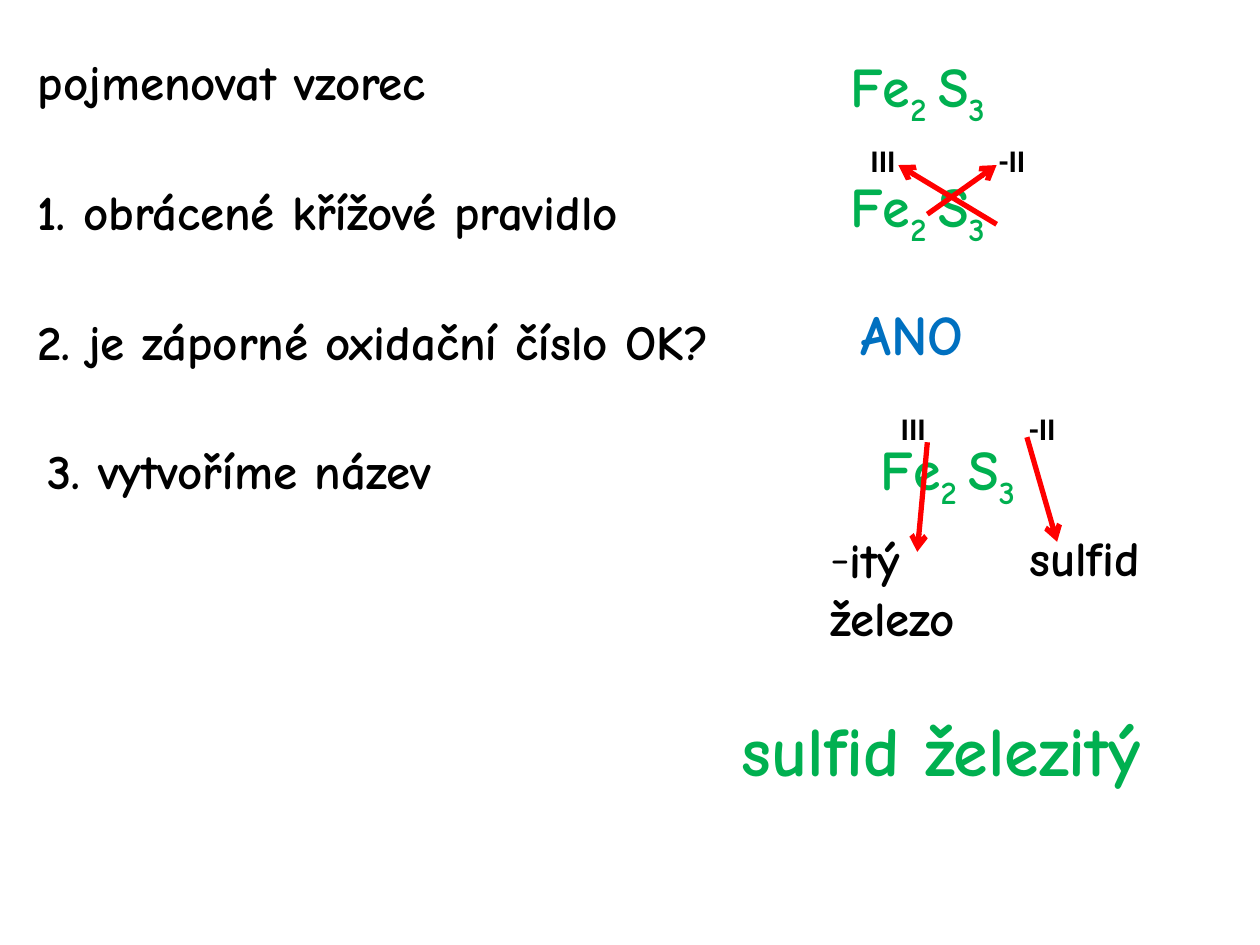
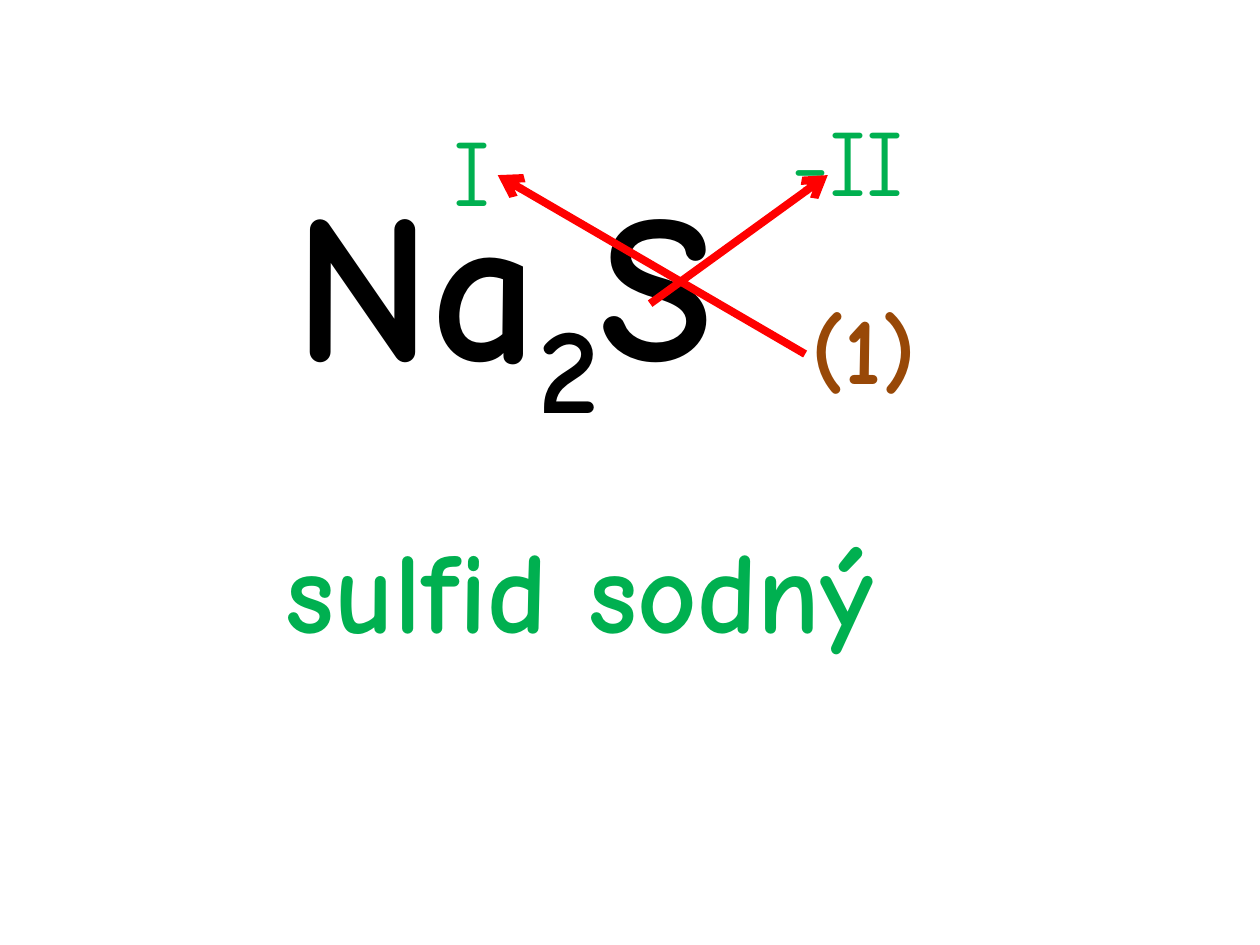
from lxml.etree import SubElement
from pptx import Presentation
from pptx.dml.color import RGBColor
from pptx.enum.shapes import MSO_CONNECTOR
from pptx.enum.text import MSO_ANCHOR, MSO_AUTO_SIZE, PP_ALIGN
from pptx.oxml.ns import qn
from pptx.util import Inches, Pt

COLORS = {
    "text": "000000",
    "formula": "00B050",
    "answer": "0070C0",
    "arrow": "FF0000",
    "hidden_index": "984807",
}
HAND, PLAIN = "Comic Neue", "Calibri"
SUBSCRIPT = "-25000"
TITLE_ONLY = 5
IRON_SULFIDE = [("Fe", False), ("2 ", True), ("S", False), ("3", True)]
SODIUM_SULFIDE = [("Na", False), ("2", True), ("S", False)]


def add_spans(para, spans, size, color, font=HAND, bold=True):
    """Add (text, is_subscript) spans to a paragraph."""
    para.alignment = PP_ALIGN.LEFT
    for text, is_subscript in spans:
        span = para.add_run()
        span.text = text
        span.font.size = Pt(size)
        span.font.name = font
        span.font.bold = bold
        span.font.color.rgb = RGBColor.from_string(COLORS[color])
        if is_subscript:
            span.font._element.set("baseline", SUBSCRIPT)


def fill_box(box, place, lines, size, color="text", wrap=True, **style):
    """Place a box and write its lines; a line is a string or a list of spans."""
    box.left, box.top, box.width, box.height = (Inches(value) for value in place)
    frame = box.text_frame
    frame.word_wrap = wrap
    frame.auto_size = MSO_AUTO_SIZE.SHAPE_TO_FIT_TEXT
    frame.vertical_anchor = MSO_ANCHOR.TOP
    for number, line in enumerate(lines):
        para = frame.add_paragraph() if number else frame.paragraphs[0]
        spans = [(line, False)] if isinstance(line, str) else line
        add_spans(para, spans, size, color, **style)
    return box


def add_text(shapes, place, lines, size, color="text", **style):
    box = shapes.add_textbox(0, 0, 0, 0)
    return fill_box(box, place, lines, size, color, **style)


def add_arrow(page, start, end, width=3):
    points = [Inches(value) for value in (*start, *end)]
    arrow = page.shapes.add_connector(MSO_CONNECTOR.STRAIGHT, *points)
    arrow.line.color.rgb = RGBColor.from_string(COLORS["arrow"])
    arrow.line.width = Pt(width)
    SubElement(arrow.line._get_or_add_ln(), qn("a:tailEnd"), type="arrow")
    SubElement(arrow._element.spPr, qn("a:effectLst"))


def add_dash_bullet(para):
    properties = para._p.get_or_add_pPr()
    properties.set("marL", "0")
    properties.set("indent", "0")
    SubElement(properties, qn("a:buFont"), typeface=HAND)
    SubElement(properties, qn("a:buChar"), char="-")


def add_formula(shapes, left, top):
    add_text(shapes, (left, top, 1.73, 0.64), [IRON_SULFIDE], 32, "formula")


def add_numbered_formula(page, left, top, rise):
    """Formula with its oxidation numbers, which start a rise above it."""
    group = page.shapes.add_group_shape()
    add_formula(group.shapes, left, top)
    for number, offset in (("-II", 1.18), ("III", 0.16)):
        add_text(group.shapes, (left + offset, top - rise, 0.6, 0.4), [number],
                 18, font=PLAIN)


def add_steps(page, left, top):
    """Title and the three steps, evenly spaced in the left column."""
    pitch = 1.03
    fill_box(page.shapes.title, (left, top, 3.78, 0.57), ["pojmenovat vzorec"], 28)
    steps = [
        ("1. obrácené křížové pravidlo", 0, 5.83),
        ("2. je záporné oxidační číslo OK?", 0, 6.38),
        ("3. vytvoříme název", 0.08, 4.41),
    ]
    for number, (step, shift, width) in enumerate(steps, 1):
        place = (left + shift, top + number * pitch, width, 0.57)
        add_text(page.shapes, place, [step], 28)


def add_solution(page, left, top):
    """Right column: formula, crossed indices, check and name."""
    add_formula(page.shapes, left, top)

    # Reversed cross rule
    add_numbered_formula(page, left, top + 0.95, 0.24)
    add_arrow(page, (left + 0.71, top + 1.34), (left + 1.26, top + 0.95))
    add_arrow(page, (left + 1.26, top + 1.42), (left + 0.48, top + 0.95))

    # Check of the negative number
    add_text(page.shapes, (left + 0.08, top + 1.97, 1.26, 0.64), ["ANO"], 32, "answer")

    # Parts of the name
    add_numbered_formula(page, left + 0.24, top + 3.04, 0.2)
    add_arrow(page, (left + 1.5, top + 3.11), (left + 1.74, top + 3.94))
    add_text(page.shapes, (left + 1.42, top + 3.78, 1.25, 0.57), ["sulfid"], 28, wrap=False)
    add_arrow(page, (left + 0.71, top + 3.15), (left + 0.63, top + 4.02))
    endings = add_text(page.shapes, (left - 0.16, top + 3.79, 1.38, 1.04),
                       ["itý", "železo"], 28, wrap=False)
    add_dash_bullet(endings.text_frame.paragraphs[0])

    # Finished name
    add_text(page.shapes, (left - 0.86, top + 5.2, 4.09, 0.77), ["sulfid železitý"],
             40, "formula")


def add_sodium_example(page, left, top):
    """Large formula with crossed indices and the name below."""
    fill_box(page.shapes.title, (left, top, 4.36, 2.12), [SODIUM_SULFIDE], 120, wrap=False)
    labels = [
        ("-II", (3.94, -0.39, 1.34, 1.01), 54, "formula", False),
        ("I", (1.26, -0.31, 0.62, 1.01), 54, "formula", False),
        ("sulfid sodný", (-0.07, 2.91, 5.54, 1.21), 66, "formula", True),
        ("(1)", (4.1, 1.1, 1.22, 1.01), 54, "hidden_index", True),
    ]
    for text, (shift, drop, width, height), size, color, bold in labels:
        add_text(page.shapes, (left + shift, top + drop, width, height), [text],
                 size, color, bold=bold, wrap=False)
    add_arrow(page, (left + 2.92, top + 1.26), (left + 4.33, top + 0.24), 4.5)
    add_arrow(page, (left + 4.15, top + 1.66), (left + 1.71, top + 0.24), 4.5)


def main():
    deck = Presentation()
    deck.slide_width, deck.slide_height = Inches(10), Inches(7.5)
    layout = deck.slide_layouts[TITLE_ONLY]

    naming = deck.slides.add_slide(layout)
    add_steps(naming, 0.2, 0.36)
    add_solution(naming, 6.65, 0.36)

    add_sodium_example(deck.slides.add_slide(layout), 2.24, 1.15)
    deck.save("out.pptx")


if __name__ == "__main__":
    main()
